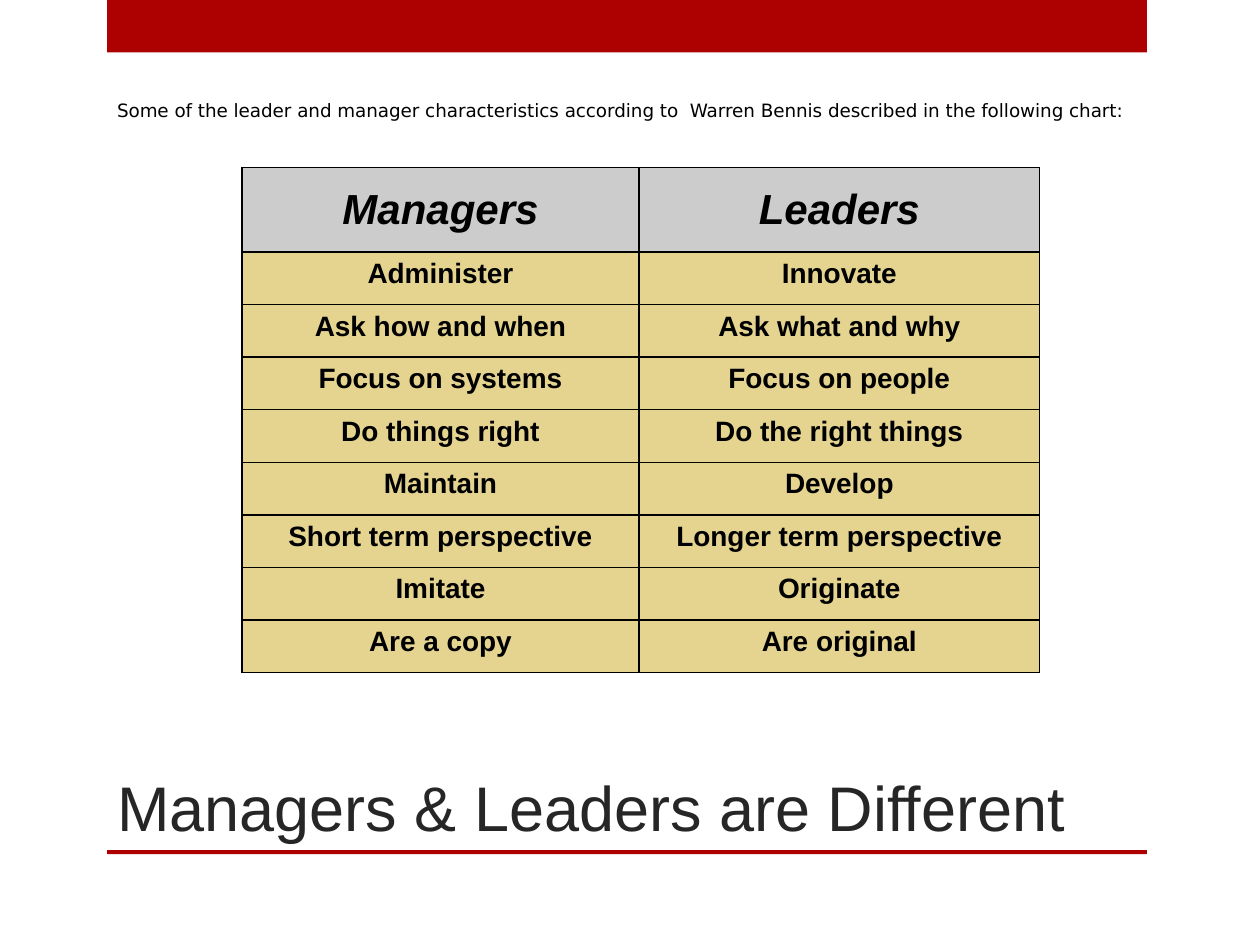
from lxml.etree import SubElement
from pptx import Presentation
from pptx.dml.color import RGBColor
from pptx.enum.shapes import MSO_SHAPE
from pptx.enum.text import MSO_ANCHOR, MSO_AUTO_SIZE, PP_ALIGN
from pptx.oxml.ns import qn
from pptx.util import Cm, Pt

RED = RGBColor(0xAD, 0x01, 0x01)
SAND = RGBColor(0xE4, 0xD4, 0x90)
GREY = RGBColor(0xCC, 0xCC, 0xCC)
DARK = RGBColor(0x26, 0x26, 0x26)
BLACK = RGBColor(0, 0, 0)

TITLE = "Managers & Leaders are Different"
INTRO = ("Some of the leader and manager characteristics according to  "
         "Warren Bennis described in the following chart:")
COMPARISON = [
    ("Managers", "Leaders"),
    ("Administer", "Innovate"),
    ("Ask how and when", "Ask what and why"),
    ("Focus on systems", "Focus on people"),
    ("Do things right", "Do the right things"),
    ("Maintain", "Develop"),
    ("Short term perspective", "Longer term perspective"),
    ("Imitate", "Originate"),
    ("Are a copy", "Are original"),
]

BAR_LEFT, BAR_WIDTH = Cm(2.16), Cm(20.96)
TEXT_LEFT = Cm(2.11)
TABLE_LEFT, TABLE_TOP = Cm(4.88), Cm(3.38)
COLUMN_WIDTHS = (Cm(8), Cm(8.08))
HEADER_HEIGHT, ROW_HEIGHT = Cm(1.7), Cm(1.06)


def format_text(text_frame, font_name, size, color, bold=False, italic=False):
    for paragraph in text_frame.paragraphs:
        for run in paragraph.runs:
            font = run.font
            font.name, font.size = font_name, Pt(size)
            font.bold, font.italic = bold, italic
            font.color.rgb = color


def add_rectangle(slide, left, top, width, height, fill, line=None):
    shape = slide.shapes.add_shape(MSO_SHAPE.RECTANGLE, left, top, width, height)
    shape.shadow.inherit = False
    shape.fill.solid()
    shape.fill.fore_color.rgb = fill
    if line is None:
        shape.line.fill.background()
    else:
        shape.line.color.rgb = line
        shape.line.width = Pt(0.75)


def set_title(slide):
    title = slide.shapes.title
    title.left, title.top = TEXT_LEFT, Cm(12.7)
    title.width, title.height = BAR_WIDTH, Cm(4.45)
    text_frame = title.text_frame
    text_frame.text = TITLE
    text_frame.auto_size = MSO_AUTO_SIZE.NONE
    text_frame.vertical_anchor = MSO_ANCHOR.BOTTOM
    text_frame.paragraphs[0].alignment = PP_ALIGN.LEFT
    format_text(text_frame, "Arial", 36, DARK)


def add_intro(slide):
    text_box = slide.shapes.add_textbox(TEXT_LEFT, Cm(1.27), Cm(21.59), Cm(1.9))
    text_frame = text_box.text_frame
    text_frame.word_wrap = True
    text_frame.vertical_anchor = MSO_ANCHOR.MIDDLE
    text_frame.text = INTRO
    format_text(text_frame, "DejaVu Sans", 10.5, BLACK)


def set_borders(cell):
    """Draw a thin black line on all four sides; call before setting the fill."""
    properties = cell._tc.get_or_add_tcPr()
    for side in ("a:lnL", "a:lnR", "a:lnT", "a:lnB"):
        line = SubElement(properties, qn(side), w=str(Pt(1)))
        fill = SubElement(line, qn("a:solidFill"))
        SubElement(fill, qn("a:srgbClr"), val=str(BLACK))


def format_cell(cell, text, is_header):
    cell.text = text
    cell.text_frame.paragraphs[0].alignment = PP_ALIGN.CENTER
    format_text(cell.text_frame, "Arial", 24 if is_header else 16, BLACK,
                bold=True, italic=is_header)
    set_borders(cell)
    if is_header:
        cell.vertical_anchor = MSO_ANCHOR.MIDDLE
        cell.fill.solid()
        cell.fill.fore_color.rgb = GREY
    else:
        cell.vertical_anchor = MSO_ANCHOR.TOP
        cell.fill.background()


def add_comparison_table(slide):
    """Place the table on a sand-coloured panel that shows through its body."""
    width = sum(COLUMN_WIDTHS)
    height = HEADER_HEIGHT + ROW_HEIGHT * (len(COMPARISON) - 1)
    add_rectangle(slide, TABLE_LEFT, TABLE_TOP, width, height, SAND, BLACK)
    table = slide.shapes.add_table(len(COMPARISON), len(COLUMN_WIDTHS),
                                   TABLE_LEFT, TABLE_TOP, width, height).table
    for column, column_width in zip(table.columns, COLUMN_WIDTHS):
        column.width = column_width
    for row_index, (row, texts) in enumerate(zip(table.rows, COMPARISON)):
        is_header = row_index == 0
        row.height = HEADER_HEIGHT if is_header else ROW_HEIGHT
        for cell, text in zip(row.cells, texts):
            format_cell(cell, text, is_header)


def main():
    presentation = Presentation()
    presentation.slide_width, presentation.slide_height = Cm(25.4), Cm(19.05)
    slide = presentation.slides.add_slide(presentation.slide_layouts[5])
    add_rectangle(slide, BAR_LEFT, 0, BAR_WIDTH, Cm(1.06), RED)
    add_rectangle(slide, BAR_LEFT, Cm(17.14), BAR_WIDTH, Cm(0.08), RED)
    set_title(slide)
    add_comparison_table(slide)
    add_intro(slide)
    presentation.save("out.pptx")


if __name__ == "__main__":
    main()
